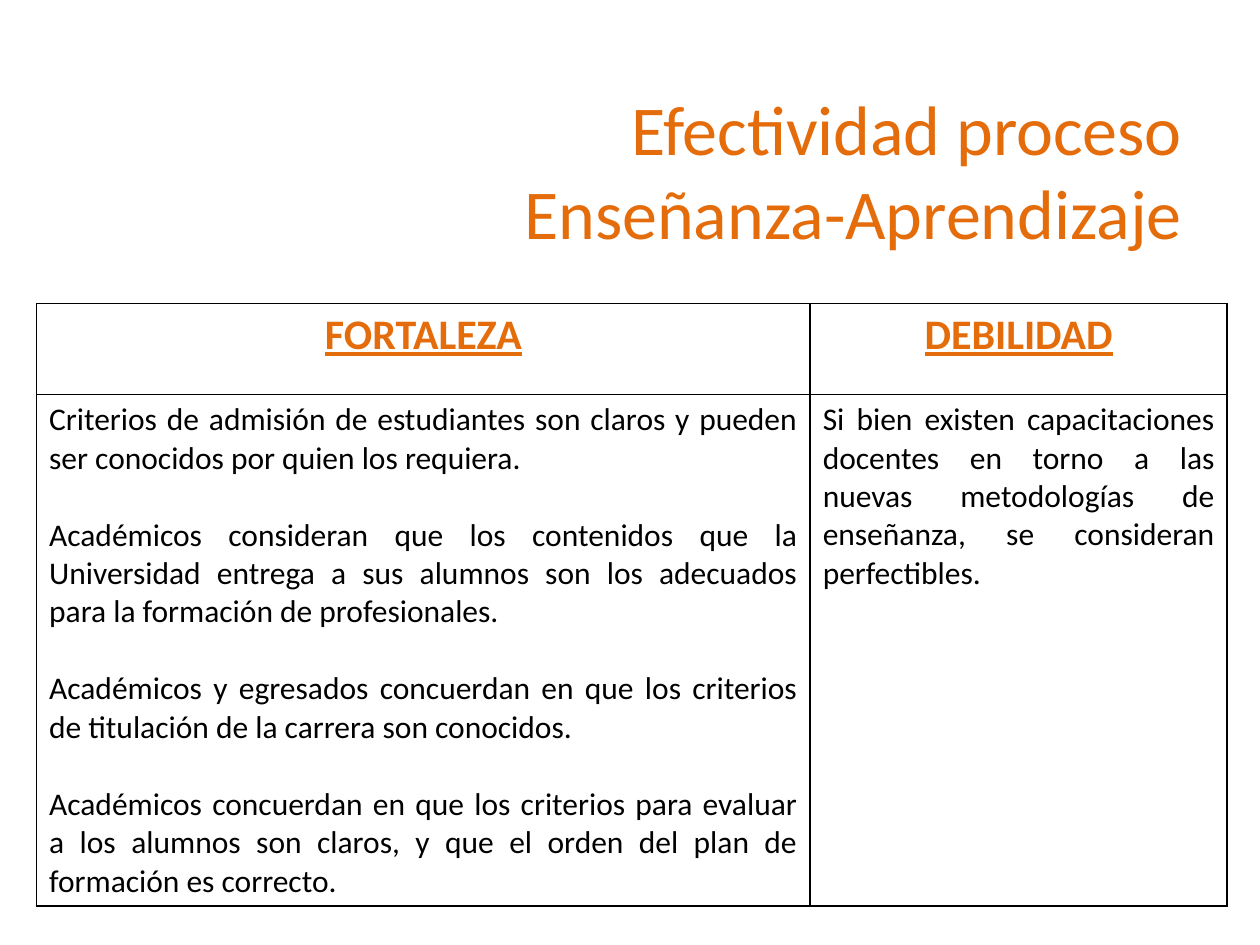
from lxml import etree
from pptx import Presentation
from pptx.dml.color import RGBColor
from pptx.enum import text
from pptx.oxml import ns
from pptx import util as u

ORANGE = RGBColor(0xE4, 0x6C, 0x0A)
BLACK = RGBColor(0, 0, 0)
FONT = "Calibri"
WIDTH, HEIGHT = u.Inches(10), u.Inches(7.5)
COLUMNS = (6.14, 3.31)
ROWS = (0.72, 4.06)
TITLE = "Efectividad proceso Enseñanza-Aprendizaje"
HEADERS = ("FORTALEZA", "DEBILIDAD")
STRENGTHS = (
    "Criterios de admisión de estudiantes son claros y pueden ser conocidos por quien los requiera.",
    "Académicos consideran que los contenidos que la Universidad entrega a sus alumnos "
    "son los adecuados para la formación de profesionales.",
    "Académicos y egresados concuerdan en que los criterios de titulación de la carrera son conocidos.",
    "Académicos concuerdan en que los criterios para evaluar a los alumnos son claros, "
    "y que el orden del plan de formación es correcto.",
)
WEAKNESSES = (
    "Si bien existen capacitaciones docentes en torno a las nuevas metodologías "
    "de enseñanza, se consideran perfectibles.",
)


def write(tf, lines, size, color, align, heading=False):
    for i, line in enumerate(lines):
        p = tf.add_paragraph() if i else tf.paragraphs[0]
        p.alignment = align
        if i:
            p.space_before = u.Pt(22)
        r = p.add_run()
        r.text = line
        r.font.name, r.font.size = FONT, u.Pt(size)
        r.font.bold = r.font.underline = heading
        r.font.color.rgb = color


def add_title(s):
    sp = s.shapes.add_textbox(*(u.Inches(v) for v in (2.48, 0.99, 7, 0.71)))
    tf = sp.text_frame
    tf.word_wrap = True
    tf.vertical_anchor = text.MSO_ANCHOR.MIDDLE
    write(tf, [TITLE], 40, ORANGE, text.PP_ALIGN.RIGHT)


def add_borders(cell):
    pr = cell._tc.get_or_add_tcPr()
    for i, side in enumerate(("lnL", "lnR", "lnT", "lnB")):
        ln = etree.Element(ns.qn(f"a:{side}"), w=str(u.Pt(1)))
        fill = etree.SubElement(ln, ns.qn("a:solidFill"))
        etree.SubElement(fill, ns.qn("a:srgbClr"), val=str(BLACK))
        pr.insert(i, ln)


def add_comparison(s):
    sp = s.shapes.add_table(len(ROWS), len(COLUMNS), u.Inches(0.29), u.Inches(2.41),
                            u.Inches(sum(COLUMNS)), u.Inches(sum(ROWS)))
    table = sp.table
    for row, height in zip(table.rows, ROWS):
        row.height = u.Inches(height)
    for i, (width, header, points) in enumerate(zip(COLUMNS, HEADERS, (STRENGTHS, WEAKNESSES))):
        table.columns[i].width = u.Inches(width)
        write(table.cell(0, i).text_frame, [header], 24, ORANGE, text.PP_ALIGN.CENTER, True)
        write(table.cell(1, i).text_frame, points, 18, BLACK, text.PP_ALIGN.JUSTIFY)
    for cell in table.iter_cells():
        cell.fill.background()
        add_borders(cell)


def main():
    prs = Presentation()
    prs.slide_width, prs.slide_height = WIDTH, HEIGHT
    s = prs.slides.add_slide(prs.slide_layouts[6])
    add_title(s)
    add_comparison(s)
    prs.save("out.pptx")


if __name__ == "__main__":
    main()
